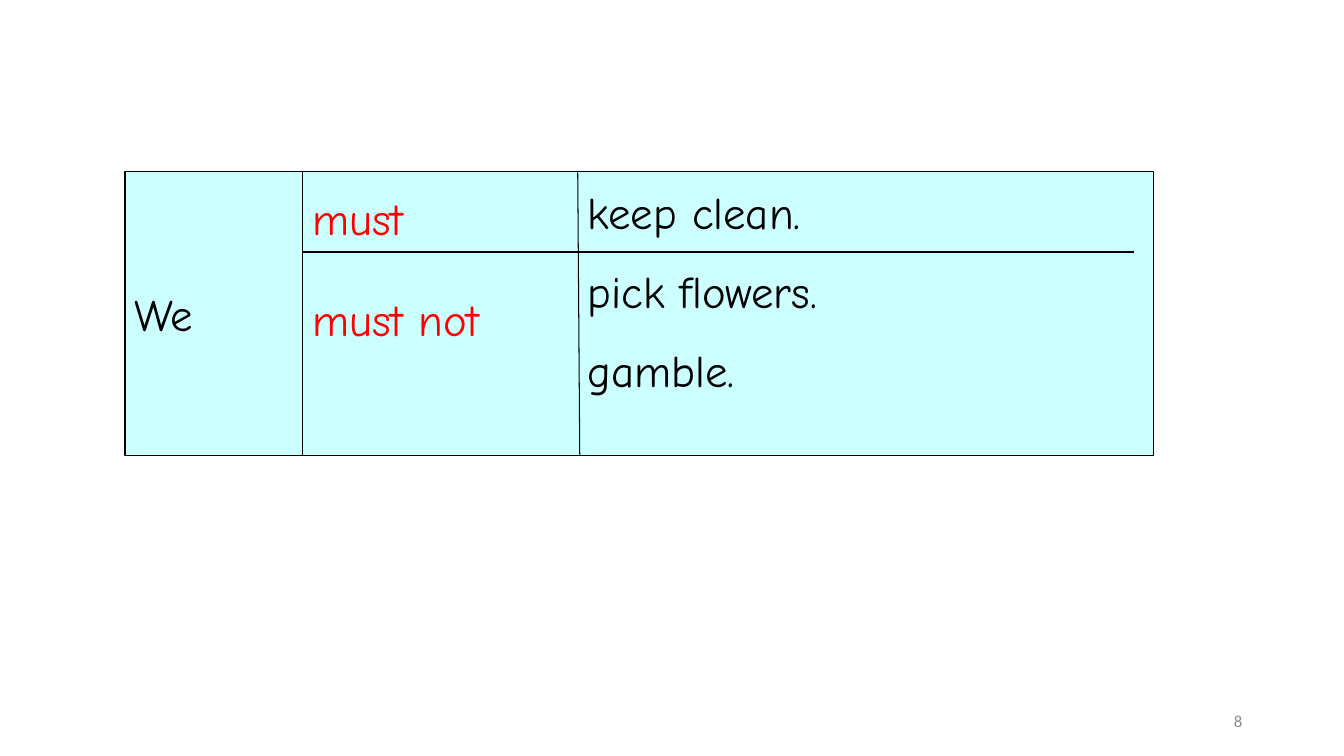
import pptx
import pptx.util
import pptx.dml.color
import pptx.enum.shapes
import pptx.enum.text
import pptx.oxml.xmlchemy

Inches = pptx.util.Inches
Pt = pptx.util.Pt

COLORS = {"panel": "CCFFFF", "ink": "000000", "modal": "FF0000", "number": "8C8C8C"}


class SlideBuilder:
    line_width = Pt(0.75)
    font = "Comic Neue"
    text_size = 32

    def __init__(self, slide):
        self.slide = slide

    def color(self, name):
        return pptx.dml.color.RGBColor.from_string(COLORS[name])

    def outline(self, line):
        line.color.rgb = self.color("ink")
        line.width = self.line_width

    def panel(self, left, top, width, height):
        shape = self.slide.shapes.add_shape(
            pptx.enum.shapes.MSO_SHAPE.RECTANGLE,
            Inches(left), Inches(top), Inches(width), Inches(height))
        shape.shadow.inherit = False
        shape.fill.solid()
        shape.fill.fore_color.rgb = self.color("panel")
        self.outline(shape.line)

    def rule(self, x1, y1, x2, y2):
        connector = self.slide.shapes.add_connector(
            pptx.enum.shapes.MSO_CONNECTOR.STRAIGHT,
            Inches(x1), Inches(y1), Inches(x2), Inches(y2))
        self.outline(connector.line)
        connector._element.spPr.append(pptx.oxml.xmlchemy.OxmlElement("a:effectLst"))

    def text(self, left, top, width, height, lines, color="ink", gap=0,
             size=text_size, font=font, align="LEFT", anchor="TOP"):
        """Add one paragraph per line, with gap points between paragraphs."""
        box = self.slide.shapes.add_textbox(
            Inches(left), Inches(top), Inches(width), Inches(height))
        frame = box.text_frame
        frame.word_wrap = True
        frame.vertical_anchor = pptx.enum.text.MSO_ANCHOR[anchor]
        for index, line in enumerate(lines):
            paragraph = frame.add_paragraph() if index else frame.paragraphs[0]
            paragraph.alignment = pptx.enum.text.PP_ALIGN[align]
            paragraph.space_before = Pt(gap if index else 0)
            run = paragraph.add_run()
            run.text = line
            run.font.size = Pt(size)
            run.font.name = font
            run.font.color.rgb = self.color(color)


def main():
    presentation = pptx.Presentation()
    presentation.slide_width = Inches(13.33)
    presentation.slide_height = Inches(7.5)
    builder = SlideBuilder(presentation.slides.add_slide(presentation.slide_layouts[6]))

    builder.panel(1.24, 1.7, 10.2, 2.82)
    builder.text(1.24, 2.8, 1.65, 0.77, ["We"])
    builder.rule(3, 1.7, 3, 4.52)
    builder.text(5.73, 1.78, 6.14, 2.26,
                 ["keep clean.", "pick flowers.", "gamble."], gap=18)
    builder.text(3, 1.84, 2.83, 2.74, ["must", "must not"], color="modal", gap=34)
    builder.rule(5.73, 1.71, 5.75, 4.51)
    builder.rule(3, 2.5, 11.25, 2.5)
    builder.text(9.42, 6.95, 3, 0.4, ["8"], color="number", size=12,
                 font="Calibri", align="RIGHT", anchor="MIDDLE")
    presentation.save("out.pptx")


if __name__ == "__main__":
    main()
